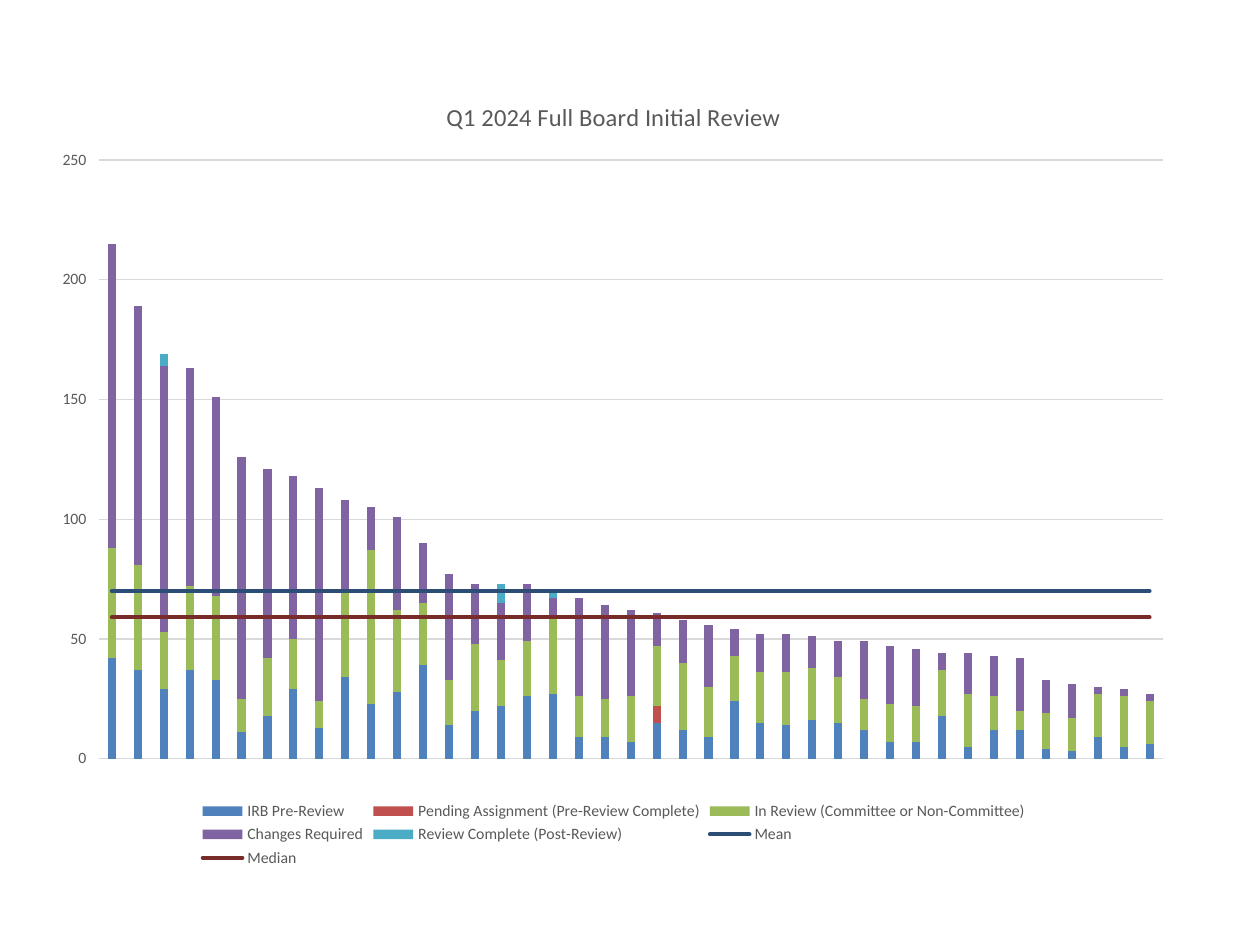
"""Build a slide with a stacked column chart of review times plus mean and median lines."""
from lxml import etree
from pptx import Presentation
from pptx.chart.data import CategoryChartData
from pptx.dml.color import RGBColor
from pptx.enum import chart as kinds
from pptx.oxml import parse_xml
from pptx.oxml.ns import nsdecls, qn
from pptx.util import Cm, Pt

GREY = RGBColor(0x59, 0x59, 0x59)
GRID = RGBColor(0xD9, 0xD9, 0xD9)
BLUE = RGBColor(0x4F, 0x81, 0xBD)
RED = RGBColor(0xC0, 0x50, 0x4D)
GREEN = RGBColor(0x9B, 0xBB, 0x59)
PURPLE = RGBColor(0x80, 0x64, 0xA2)
TEAL = RGBColor(0x4B, 0xAC, 0xC6)
NAVY = RGBColor(0x2C, 0x4D, 0x75)
MAROON = RGBColor(0x77, 0x2C, 0x2A)

COUNT = 41
PRE_REVIEW = [42, 37, 29, 37, 33, 11, 18, 29, 13, 34, 23, 28, 39, 14, 20, 22, 26, 27, 9, 9, 7,
              15, 12, 9, 24, 15, 14, 16, 15, 12, 7, 7, 18, 5, 12, 12, 4, 3, 9, 5, 6]
IN_REVIEW = [46, 44, 24, 35, 35, 14, 24, 21, 11, 35, 64, 34, 26, 19, 28, 19, 23, 33, 17, 16, 19,
             25, 28, 21, 19, 21, 22, 22, 19, 13, 16, 15, 19, 22, 14, 8, 15, 14, 18, 21, 18]
CHANGES = [127, 108, 111, 91, 83, 101, 79, 68, 89, 39, 18, 39, 25, 44, 25, 24, 24, 7, 41, 39, 36,
           14, 18, 26, 11, 16, 16, 13, 15, 24, 24, 24, 7, 17, 17, 22, 14, 14, 3, 3, 3]
PENDING = [7 if case == 22 else 0 for case in range(1, COUNT + 1)]
COMPLETE = [{3: 5, 16: 8, 18: 3}.get(case, 0) for case in range(1, COUNT + 1)]

COLUMNS = [
    ("IRB Pre-Review", PRE_REVIEW, BLUE),
    ("Pending Assignment (Pre-Review Complete)", PENDING, RED),
    ("In Review (Committee or Non-Committee)", IN_REVIEW, GREEN),
    ("Changes Required", CHANGES, PURPLE),
    ("Review Complete (Post-Review)", COMPLETE, TEAL),
]
LINES = [("Mean", [70] * COUNT, NAVY), ("Median", [59] * COUNT, MAROON)]


def set_font(font, size, color=GREY):
    font.name, font.size, font.bold = "Calibri", Pt(size), False
    font.color.rgb = color


def make_layout(**fractions):
    layout = parse_xml(f"<c:layout {nsdecls('c')}><c:manualLayout/></c:layout>")
    for name, value in fractions.items():
        etree.SubElement(layout[0], qn(f"c:{name}")).set("val", str(value))
    return layout


deck = Presentation()
deck.slide_width, deck.slide_height = Cm(25.4), Cm(19.05)
page = deck.slides.add_slide(deck.slide_layouts[6])

data = CategoryChartData()
data.categories = [str(case) for case in range(1, COUNT + 1)]
for name, values, color in COLUMNS + LINES:
    data.add_series(name, values)
frame = page.shapes.add_chart(kinds.XL_CHART_TYPE.COLUMN_STACKED,
                              Cm(0.84), Cm(1.27), Cm(23.06), Cm(16.31), data)
chart = frame.chart
set_font(chart.font, 10)

columns = chart.plots[0]
columns.gap_width, columns.overlap = 219, 100
columns.vary_by_categories = False
bar_xml = chart._chartSpace.find(f".//{qn('c:barChart')}")
line_xml = parse_xml(f'<c:lineChart {nsdecls("c")}><c:grouping val="standard"/>'
                     '<c:varyColors val="0"/></c:lineChart>')
for series_xml in bar_xml.findall(qn("c:ser"))[len(COLUMNS):]:
    for flag in series_xml.findall(qn("c:invertIfNegative")):
        series_xml.remove(flag)
    line_xml.append(series_xml)
etree.SubElement(line_xml, qn("c:marker")).set("val", "1")
for axis_id in bar_xml.findall(qn("c:axId")):
    etree.SubElement(line_xml, qn("c:axId")).set("val", axis_id.get("val"))
bar_xml.addnext(line_xml)

for series, (name, values, color) in zip(columns.series, COLUMNS):
    series.format.fill.solid()
    series.format.fill.fore_color.rgb = color
    series.invert_if_negative = False
for series, (name, values, color) in zip(chart.plots[1].series, LINES):
    series.format.line.color.rgb = color
    series.format.line.width = Pt(2.25)
    series.format.line._ln.set("cap", "rnd")
    series.marker.style = kinds.XL_MARKER_STYLE.NONE
    series.smooth = False

chart.category_axis.visible = False
axis = chart.value_axis
axis.minimum_scale, axis.maximum_scale, axis.major_unit = 0, 250, 50
axis.format.line.fill.background()
axis.major_gridlines.format.line.color.rgb = GRID
axis.major_gridlines.format.line.width = Pt(0.75)
set_font(axis.tick_labels.font, 9)

chart.has_title = True
title = chart.chart_title
title.text_frame.text = "Q1 2024 Full Board Initial Review"
set_font(title.text_frame.paragraphs[0].font, 14)
title_xml = title._element
for layout in title_xml.findall(qn("c:layout")):
    title_xml.remove(layout)
title_xml.find(qn("c:tx")).addnext(make_layout(xMode="edge", yMode="edge", x=0.35, y=0.04))

chart.has_legend = True
chart.legend.position = kinds.XL_LEGEND_POSITION.BOTTOM
chart.legend.include_in_layout = False
set_font(chart.legend.font, 9)

plot_area = bar_xml.getparent()
for layout in plot_area.findall(qn("c:layout")):
    plot_area.remove(layout)
plot_area.insert(0, make_layout(layoutTarget="inner", xMode="edge", yMode="edge",
                                x=0.05, y=0.12, w=0.93, h=0.74))

deck.save("out.pptx")
